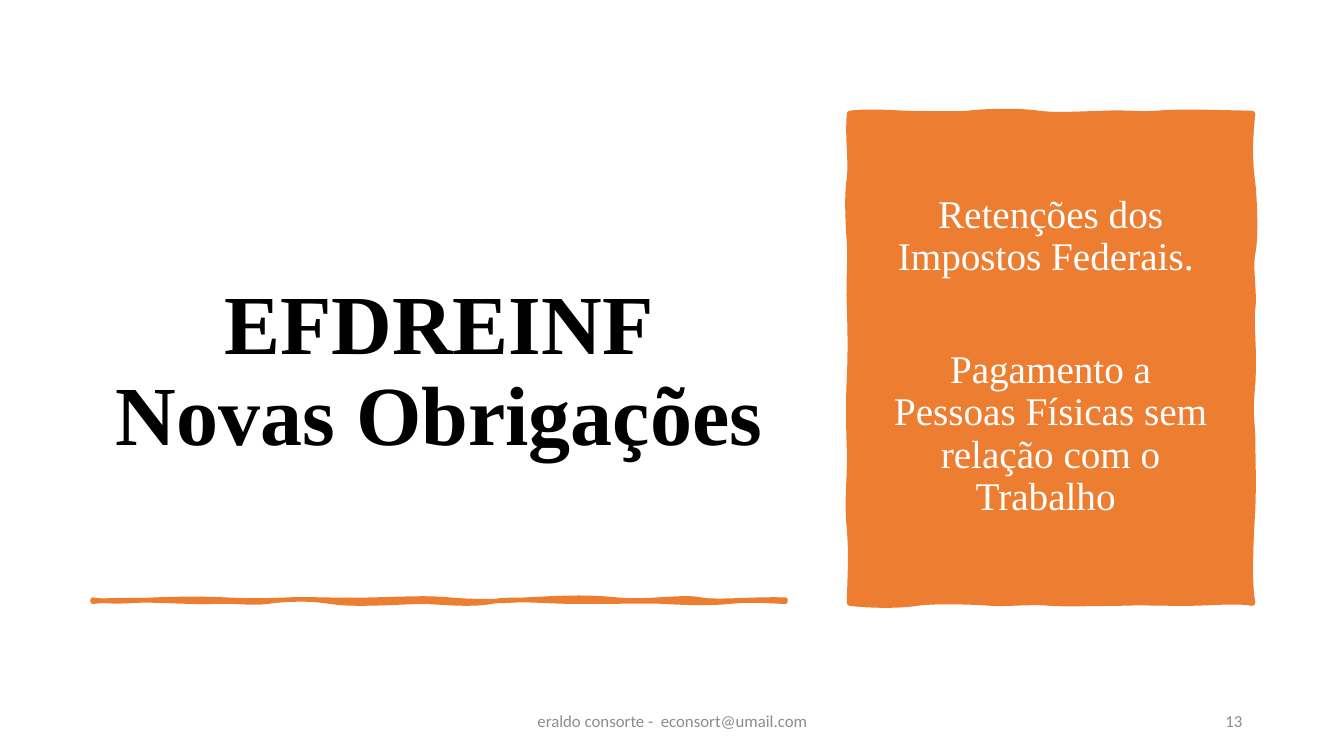
from lxml import etree
from pptx import Presentation
from pptx.dml.color import RGBColor
from pptx.enum.text import MSO_ANCHOR, MSO_AUTO_SIZE, PP_ALIGN
from pptx.oxml.ns import qn
from pptx.util import Inches, Pt

CENTER, RIGHT = PP_ALIGN.CENTER, PP_ALIGN.RIGHT
BOTTOM, MIDDLE = MSO_ANCHOR.BOTTOM, MSO_ANCHOR.MIDDLE
NO_AUTOFIT = MSO_AUTO_SIZE.NONE
SERIF, SANS = "Times New Roman", "Calibri"
ORANGE, BLACK, WHITE, GRAY = "ED7D31", "000000", "FFFFFF", "8C8C8C"

# Each curve: first control point, second control point, end point
PANEL_START = (8.43, 1.13)
PANEL_CURVES = [
    # top edge
    (8.55, 1.11, 8.83, 1.12, 8.97, 1.13), (9.12, 1.13, 9.47, 1.14, 9.6, 1.13),
    (9.73, 1.11, 10.13, 1.1, 10.3, 1.13), (10.48, 1.15, 10.63, 1.14, 10.93, 1.13),
    (11.22, 1.12, 11.22, 1.14, 11.47, 1.13), (11.72, 1.11, 11.94, 1.12, 12.42, 1.13),
    # right edge
    (12.39, 1.37, 12.39, 1.63, 12.42, 1.82), (12.44, 2.01, 12.45, 2.37, 12.42, 2.51),
    (12.39, 2.66, 12.44, 2.91, 12.42, 3.06), (12.4, 3.22, 12.44, 3.46, 12.42, 3.8),
    (12.39, 4.14, 12.41, 4.1, 12.42, 4.35), (12.42, 4.61, 12.43, 4.73, 12.42, 5.04),
    (12.4, 5.36, 12.38, 5.79, 12.42, 5.98),
    # bottom edge
    (12.28, 5.95, 11.97, 5.98, 11.75, 5.98), (11.53, 5.98, 11.3, 5.97, 11.09, 5.98),
    (10.87, 5.98, 10.62, 5.99, 10.42, 5.98), (10.23, 5.96, 9.96, 5.99, 9.84, 5.98),
    (9.72, 5.97, 9.3, 5.95, 9.09, 5.98), (8.89, 6.01, 8.6, 6, 8.43, 5.98),
    # left edge
    (8.44, 5.61, 8.45, 5.52, 8.43, 5.24), (8.4, 4.96, 8.44, 4.73, 8.43, 4.45),
    (8.42, 4.16, 8.42, 3.97, 8.43, 3.75), (8.44, 3.54, 8.44, 3.3, 8.43, 3.06),
    (8.42, 2.83, 8.44, 2.61, 8.43, 2.42), (8.42, 2.22, 8.4, 1.97, 8.43, 1.77),
    (8.45, 1.58, 8.41, 1.39, 8.43, 1.13),
]
RULE_START = (0.92, 5.95)
RULE_CURVES = [
    # upper edge
    (1.14, 5.98, 1.29, 5.96, 1.54, 5.95), (1.79, 5.94, 2.03, 5.94, 2.24, 5.95),
    (2.45, 5.96, 2.61, 5.96, 2.86, 5.95), (3.11, 5.94, 3.31, 5.96, 3.7, 5.95),
    (4.08, 5.94, 4.23, 5.93, 4.46, 5.95), (4.69, 5.97, 4.86, 5.97, 5.22, 5.95),
    (5.59, 5.93, 5.82, 5.92, 6.12, 5.95), (6.43, 5.98, 6.78, 5.91, 6.95, 5.95),
    (7.13, 5.98, 7.46, 5.94, 7.79, 5.95), (7.79, 5.96, 7.79, 5.96, 7.79, 5.97),
    # lower edge
    (7.56, 5.96, 7.44, 5.95, 7.23, 5.97), (7.02, 5.99, 6.75, 5.98, 6.6, 5.97),
    (6.46, 5.96, 6.16, 5.97, 5.77, 5.97), (5.38, 5.97, 5.09, 5.93, 4.87, 5.97),
    (4.65, 6.01, 4.34, 5.97, 4.18, 5.97), (4.01, 5.97, 3.52, 6.01, 3.28, 5.97),
    (3.03, 5.93, 2.79, 5.95, 2.65, 5.97), (2.5, 5.99, 2.32, 5.96, 2.09, 5.97),
    (1.87, 5.98, 1.26, 5.93, 0.92, 5.97), (0.92, 5.96, 0.92, 5.95, 0.92, 5.95),
]


def color(hex_value):
    return RGBColor.from_string(hex_value)


def write(box, bounds, lines, align, anchor, font_name, size, hex_value, bold=False):
    """Place a text shape and fill it with one paragraph per entry of lines.

    A line break inside an entry becomes a soft break.
    """
    box.left, box.top, box.width, box.height = map(Inches, bounds)
    frame = box.text_frame
    frame.word_wrap = True
    frame.auto_size = NO_AUTOFIT
    frame.vertical_anchor = anchor
    for index, line in enumerate(lines):
        paragraph = frame.add_paragraph() if index else frame.paragraphs[0]
        paragraph.alignment = align
        for part_index, part in enumerate(line.split("\n")):
            if part_index:
                paragraph.add_line_break()
            run = paragraph.add_run()
            run.text = part
            run.font.name = font_name
            run.font.size = Pt(size)
            run.font.bold = bold
            run.font.color.rgb = color(hex_value)
    return frame


prs = Presentation()
prs.slide_width, prs.slide_height = Inches(13.33), Inches(7.5)
slide = prs.slides.add_slide(prs.slide_layouts[0])
shapes = slide.shapes
title, topics = slide.placeholders

# Hand-drawn panel and rule
for start, curves, line_width in (
    (PANEL_START, PANEL_CURVES, 4.5),
    (RULE_START, RULE_CURVES, 3.25),
):
    points = [(Inches(curve[i]), Inches(curve[i + 1]))
              for curve in curves for i in (0, 2, 4)]
    builder = shapes.build_freeform(*map(Inches, start))
    builder.add_line_segments(points, close=True)
    sketch = builder.convert_to_shape()
    # Every three straight segments become one Bezier curve
    segments = list(sketch.element.iter(qn("a:lnTo")))
    for first in range(0, len(segments), 3):
        bezier = etree.Element(qn("a:cubicBezTo"))
        segments[first].addprevious(bezier)
        for segment in segments[first:first + 3]:
            bezier.append(segment[0])
            segment.getparent().remove(segment)
    sketch.shadow.inherit = False
    sketch.fill.solid()
    sketch.fill.fore_color.rgb = color(ORANGE)
    sketch.line.color.rgb = color(ORANGE)
    sketch.line.width = Pt(line_width)

# Title on the left
title_frame = write(title, (0.92, 1.23, 6.87, 4.52), ["EFDREINF\nNovas Obrigações"],
                    CENTER, BOTTOM, SERIF, 60, BLACK, bold=True)
title_frame.margin_bottom = Inches(1.15)
title_frame.paragraphs[0].line_spacing = 0.9

# Topics on the panel, brought in front of it
shapes.element.append(topics.element)
topics_frame = write(
    topics, (8.67, 1.35, 3.5, 4.21),
    ["Retenções dos Impostos Federais. ",
     "Pagamento a Pessoas Físicas sem relação com o Trabalho "],
    CENTER, BOTTOM, SERIF, 28, WHITE)
topics_frame.margin_bottom = Inches(0.41)
for topic, space_before in zip(topics_frame.paragraphs, (10, 50.5)):
    topic.line_spacing = 0.9
    topic.space_before = Pt(space_before)

# Footer and page number
for bounds, text, align in (
    ((4.42, 6.95, 4.5, 0.4), "eraldo consorte -  econsort@umail.com", CENTER),
    ((9.42, 6.95, 3, 0.4), "13", RIGHT),
):
    footer = shapes.add_textbox(*map(Inches, bounds))
    write(footer, bounds, [text], align, MIDDLE, SANS, 12, GRAY)

prs.save("out.pptx")
